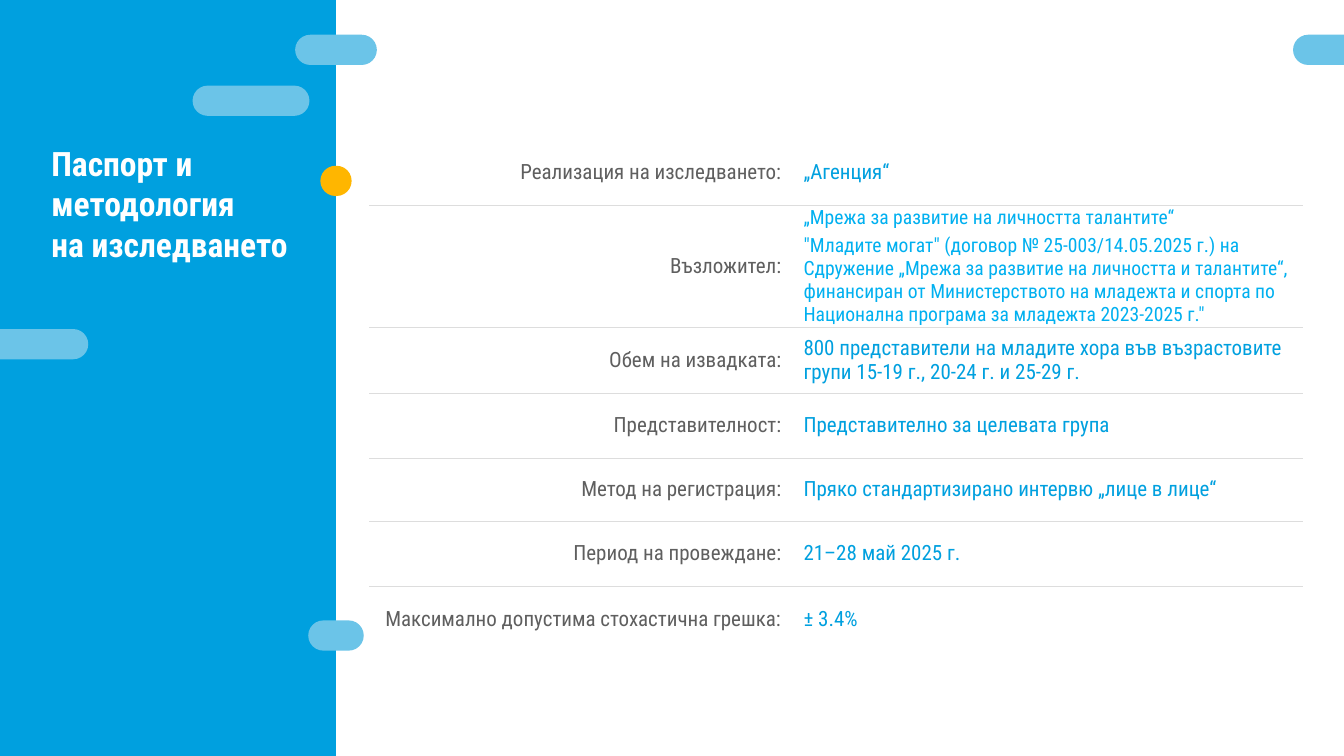
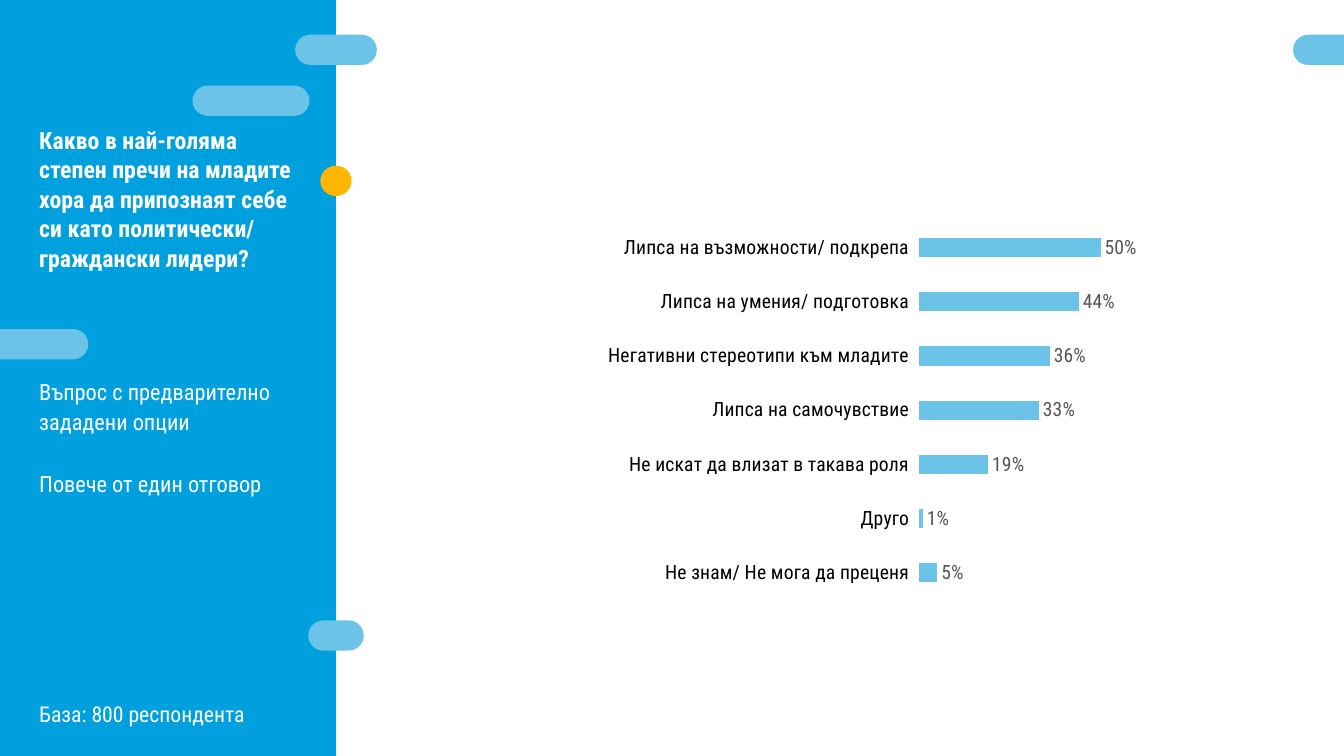
from dataclasses import dataclass
from typing import NamedTuple

from pptx import Presentation
from pptx.chart.data import CategoryChartData
from pptx.dml.color import RGBColor
from pptx.enum.chart import XL_CHART_TYPE, XL_LABEL_POSITION, XL_TICK_LABEL_POSITION, XL_TICK_MARK
from pptx.enum.shapes import MSO_SHAPE
from pptx.enum.text import MSO_ANCHOR, PP_ALIGN
from pptx.oxml import parse_xml
from pptx.oxml.ns import nsdecls, qn
from pptx.util import Inches, Pt

WIDTH, HEIGHT = Inches(40 / 3), Inches(7.5)
FONT = "Roboto Condensed"
COLORS = {
    "blue": "00A0DF",
    "light_blue": "6BC4E8",
    "bright_blue": "00B0F0",
    "yellow": "FFB600",
    "white": "FFFFFF",
    "black": "000000",
    "gray": "5F5F5F",
    "value_gray": "555555",
    "rule": "DDDDDD",
}
NO_TABLE_STYLE = "{2D5ABB26-0587-4C30-8999-92F81FD0307C}"

PANEL_WIDTH = 25
PILL_HEIGHT = 4
CELL_INDENT = Inches(0.22)


class Box(NamedTuple):
    """Place and size in percent of the slide's width and height."""
    left: float
    top: float
    width: float
    height: float

    def lengths(self) -> tuple:
        return across(self.left), down(self.top), across(self.width), down(self.height)


class Pill(NamedTuple):
    """Rounded bar given by its centre and length, in percent of the slide."""
    center_x: float
    center_y: float
    length: float
    color: str = "light_blue"


@dataclass(frozen=True)
class PanelText:
    text: str
    box: Box
    size: float
    bold: bool = False
    line_spacing: float | None = None


@dataclass(frozen=True)
class PassportRow:
    label: str
    values: tuple[str, ...]
    height: float
    size: float = 15
    color: str = "blue"


PILLS = (
    Pill(PANEL_WIDTH, 6.6, 6.08),
    Pill(18.68, 13.33, 8.7),
    Pill(PANEL_WIDTH, 23.93, 2.33, "yellow"),
    Pill(0, 45.53, 13.13),
    Pill(PANEL_WIDTH, 84.07, 4.13),
    Pill(99.25, 6.6, 6.08),
)

PASSPORT_TITLE = PanelText("Паспорт и методология \vна изследването",
                           Box(3.08, 18.27, 20.1, 17.33), 24, bold=True)
PASSPORT_COLUMNS = (30.68, 38.78)
PASSPORT_ROWS = (
    PassportRow("Реализация на изследването:", ("„Агенция“",), 8.93),
    PassportRow("Възложител:", (
        "„Мрежа за развитие на личността талантите“",
        "\"Младите могат\" (договор № 25-003/14.05.2025 г.) на Сдружение „Мрежа за развитие на "
        "личността и талантите“, финансиран от Министерството на младежта и спорта "
        "по Национална програма за младежта 2023-2025 г.\"",
    ), 16.13, 14, "bright_blue"),
    PassportRow("Обем на извадката:", (
        "800 представители на младите хора във възрастовите групи 15-19 г., 20-24 г. и 25-29 г.",
    ), 8.67),
    PassportRow("Представителност:", ("Представително за целевата група",), 8.67),
    PassportRow("Метод на регистрация:", ("Пряко стандартизирано интервю „лице в лице“",), 8.27),
    PassportRow("Период на провеждане:", ("21–28 май 2025 г.",), 8.67),
    PassportRow("Максимално допустима стохастична грешка:", ("± 3.4%",), 8.67),
)

QUESTION_TEXTS = (
    PanelText("Какво в най-голяма степен пречи на младите хора да припознаят себе си "
              "като политически/ граждански лидери?",
              Box(2.18, 15.87, 21.38, 20.8), 17, bold=True, line_spacing=21),
    PanelText("Въпрос с предварително\vзададени опции",
              Box(2.18, 48.8, 21.75, 10.27), 16, line_spacing=22),
    PanelText("Повече от един отговор", Box(2.18, 61.07, 21.75, 5.47), 16, line_spacing=22),
    PanelText("База: 800 респондента", Box(2.18, 92, 21.75, 4.8), 15.5),
)
OBSTACLES = {
    "Липса на възможности/ подкрепа": 0.5,
    "Липса на умения/ подготовка": 0.44,
    "Негативни стереотипи към младите": 0.36,
    "Липса на самочувствие": 0.33,
    "Не искат да влизат в такава роля": 0.19,
    "Друго": 0.01,
    "Не знам/ Не мога да преценя": 0.05,
}
PLOT_AREA = {"x": 0.54, "y": 0.05, "w": 0.27, "h": 0.94}


def across(percent: float) -> int:
    return round(WIDTH * percent / 100)


def down(percent: float) -> int:
    return round(HEIGHT * percent / 100)


def rgb(color: str) -> RGBColor:
    return RGBColor.from_string(COLORS[color])


def style_font(font, size: float, color: str, bold: bool = False) -> None:
    font.name = FONT
    font.size = Pt(size)
    font.bold = bold
    font.color.rgb = rgb(color)


def add_filled_shape(slide, kind, box: Box, color: str):
    shape = slide.shapes.add_shape(kind, *box.lengths())
    shape.shadow.inherit = False
    shape.fill.solid()
    shape.fill.fore_color.rgb = rgb(color)
    shape.line.fill.background()
    return shape


def add_panel_slide(presentation):
    """Add a blank slide with the side panel and its pills."""
    slide = presentation.slides.add_slide(presentation.slide_layouts[6])
    add_filled_shape(slide, MSO_SHAPE.RECTANGLE, Box(0, 0, PANEL_WIDTH, 100), "blue")
    for pill in PILLS:
        box = Box(pill.center_x - pill.length / 2, pill.center_y - PILL_HEIGHT / 2,
                  pill.length, PILL_HEIGHT)
        shape = add_filled_shape(slide, MSO_SHAPE.ROUNDED_RECTANGLE, box, pill.color)
        shape.adjustments[0] = 0.5
    return slide


def add_panel_text(slide, item: PanelText) -> None:
    text_frame = slide.shapes.add_textbox(*item.box.lengths()).text_frame
    text_frame.word_wrap = True
    text_frame.text = item.text
    paragraph = text_frame.paragraphs[0]
    if item.line_spacing:
        paragraph.line_spacing = Pt(item.line_spacing)
    for run in paragraph.runs:
        style_font(run.font, item.size, "white", item.bold)


def fill_cell(cell, texts: tuple[str, ...], size: float, color: str,
              alignment: PP_ALIGN, indent: int) -> None:
    cell.fill.background()
    cell.vertical_anchor = MSO_ANCHOR.MIDDLE
    cell.margin_left = indent
    cell.margin_right = cell.margin_top = cell.margin_bottom = 0
    cell.text_frame.text = "\n".join(texts)
    for index, paragraph in enumerate(cell.text_frame.paragraphs):
        paragraph.alignment = alignment
        if index:
            paragraph.space_before = Pt(size * 0.2)
        for run in paragraph.runs:
            style_font(run.font, size, color)


def add_cell_rule(cell, side: str) -> None:
    """Draw a hairline on one side of a cell; side is an a:tcPr child such as lnB."""
    line = parse_xml(
        f'<a:{side} {nsdecls("a")} w="3175"><a:solidFill>'
        f'<a:srgbClr val="{COLORS["rule"]}"/></a:solidFill></a:{side}>')
    cell._tc.get_or_add_tcPr().insert(0, line)


def add_passport_table(slide) -> None:
    box = Box(27.46, 18.27, sum(PASSPORT_COLUMNS), sum(row.height for row in PASSPORT_ROWS))
    table = slide.shapes.add_table(
        len(PASSPORT_ROWS), len(PASSPORT_COLUMNS), *box.lengths()).table
    table.first_row = table.horz_banding = False
    table._tbl.tblPr.find(qn("a:tableStyleId")).text = NO_TABLE_STYLE
    for column, width in zip(table.columns, PASSPORT_COLUMNS):
        column.width = across(width)
    for index, row in enumerate(PASSPORT_ROWS):
        table.rows[index].height = down(row.height)
        label, value = table.rows[index].cells
        fill_cell(label, (row.label,), 15, "gray", PP_ALIGN.RIGHT, 0)
        fill_cell(value, row.values, row.size, row.color, PP_ALIGN.LEFT, CELL_INDENT)
        for cell in (label, value):
            if index < len(PASSPORT_ROWS) - 1:
                add_cell_rule(cell, "lnB")
            if index > 0:
                add_cell_rule(cell, "lnT")


def set_plot_layout(chart) -> None:
    """Fix the inner plot area as shares of the chart's size."""
    plot_area = chart._chartSpace.chart.plotArea
    for layout in plot_area.findall(qn("c:layout")):
        plot_area.remove(layout)
    places = "".join(f'<c:{key} val="{share}"/>' for key, share in PLOT_AREA.items())
    plot_area.insert(0, parse_xml(
        f'<c:layout {nsdecls("c")}><c:manualLayout><c:layoutTarget val="inner"/>'
        f'<c:xMode val="edge"/><c:yMode val="edge"/>{places}</c:manualLayout></c:layout>'))


def add_obstacle_chart(slide) -> None:
    data = CategoryChartData(number_format="0%")
    data.categories = list(OBSTACLES)
    data.add_series("Series 1", list(OBSTACLES.values()))
    chart = slide.shapes.add_chart(
        XL_CHART_TYPE.BAR_CLUSTERED, *Box(36, 26.53, 60, 53.33).lengths(), data).chart
    chart.has_legend = chart.has_title = False
    style_font(chart.font, 14, "black")
    set_plot_layout(chart)

    category_axis = chart.category_axis
    category_axis.reverse_order = True
    category_axis.major_tick_mark = XL_TICK_MARK.NONE
    category_axis.tick_label_position = XL_TICK_LABEL_POSITION.LOW
    category_axis.format.line.fill.background()
    style_font(category_axis.tick_labels.font, 14, "black")

    value_axis = chart.value_axis
    value_axis.visible = value_axis.has_major_gridlines = False
    value_axis.minimum_scale, value_axis.maximum_scale = 0, 0.6

    plot = chart.plots[0]
    plot.gap_width = 182
    plot.vary_by_categories = False
    bar_fill = plot.series[0].format.fill
    bar_fill.solid()
    bar_fill.fore_color.rgb = rgb("light_blue")
    plot.has_data_labels = True
    labels = plot.data_labels
    labels.show_value = True
    labels.number_format, labels.number_format_is_linked = "0%", False
    labels.position = XL_LABEL_POSITION.OUTSIDE_END
    style_font(labels.font, 14, "value_gray")


def main() -> None:
    presentation = Presentation()
    presentation.slide_width, presentation.slide_height = WIDTH, HEIGHT

    passport_slide = add_panel_slide(presentation)
    add_panel_text(passport_slide, PASSPORT_TITLE)
    add_passport_table(passport_slide)

    question_slide = add_panel_slide(presentation)
    for item in QUESTION_TEXTS:
        add_panel_text(question_slide, item)
    add_obstacle_chart(question_slide)

    presentation.save("out.pptx")


if __name__ == "__main__":
    main()
